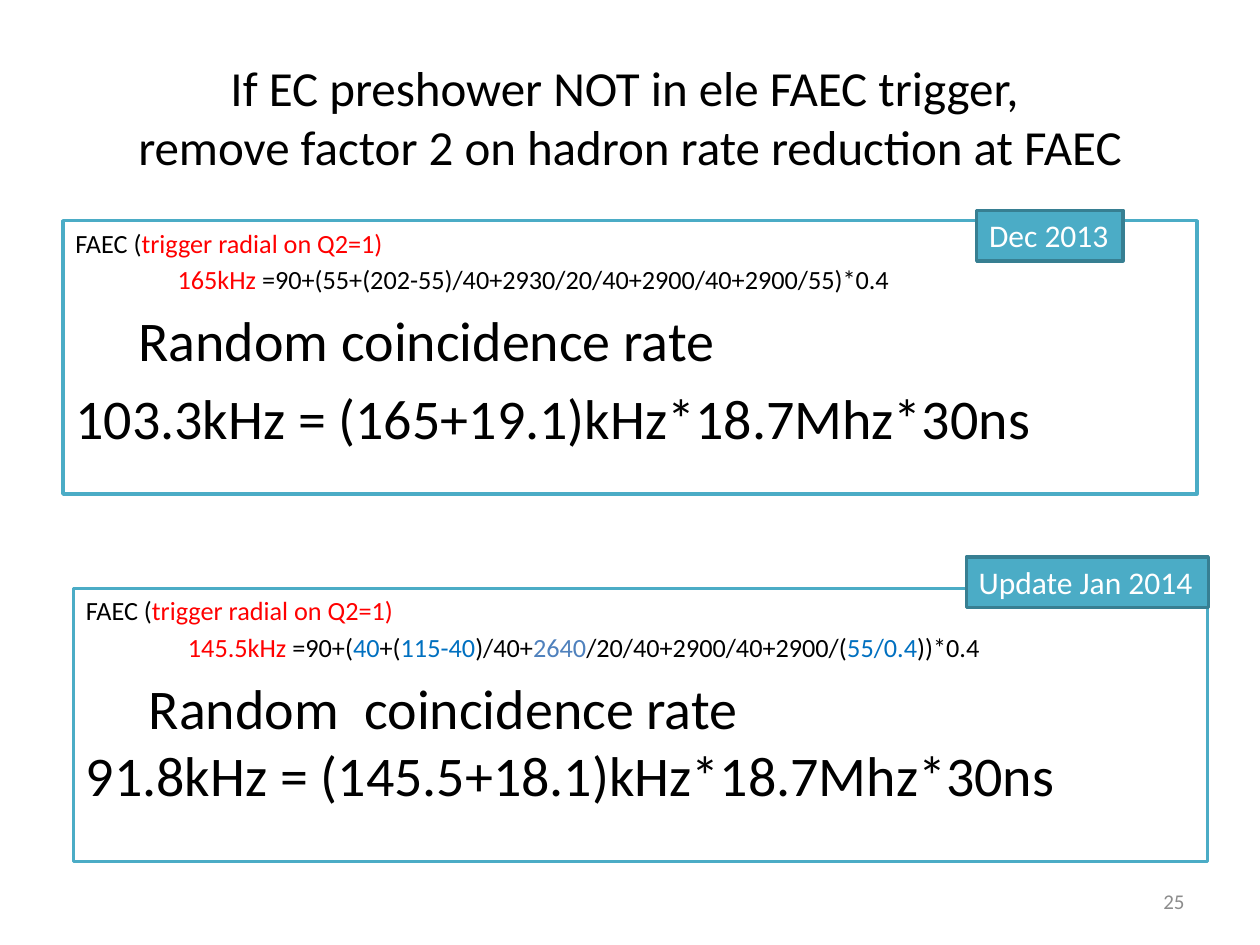
import dataclasses
import pptx
import pptx.util
import pptx.dml.color
import pptx.enum.shapes
import pptx.enum.text

Cm, Pt = pptx.util.Cm, pptx.util.Pt
ALIGN = pptx.enum.text.PP_ALIGN
ANCHOR = pptx.enum.text.MSO_ANCHOR
FONT = "Calibri"
BLACK, WHITE, RED = "000000", "FFFFFF", "FF0000"
TEAL, DARK, BLUE, PALE, GRAY = "4BACC6", "377F92", "0070C0", "4F81BD", "8C8C8C"


@dataclasses.dataclass
class Line:
    runs: list  # (text, colour) pairs
    size: int
    indent: float = 0  # cm
    before: int = 0  # points


@dataclasses.dataclass
class Panel:
    left: float
    top: float
    lines: list
    tag: str
    tag_box: tuple  # left, top, width


def rgb(code: str):
    return pptx.dml.color.RGBColor.from_string(code)


def style(para, size: int, color: str):
    for run in para.runs:
        font = run.font
        font.name, font.size, font.bold = FONT, Pt(size), False
        font.color.rgb = rgb(color)


def add_box(slide, left, top, width, height, fill: str, edge: str):
    box = slide.shapes.add_shape(
        pptx.enum.shapes.MSO_SHAPE.RECTANGLE,
        Cm(left), Cm(top), Cm(width), Cm(height))
    box.shadow.inherit = False
    box.fill.solid()
    box.fill.fore_color.rgb = rgb(fill)
    box.line.color.rgb = rgb(edge)
    box.line.width = Pt(2)
    box.text_frame.vertical_anchor = ANCHOR.TOP
    return box


def add_lines(frame, lines: list):
    for i, line in enumerate(lines):
        para = frame.add_paragraph() if i else frame.paragraphs[0]
        para.alignment = ALIGN.LEFT
        para.space_before = Pt(line.before)
        para._p.get_or_add_pPr().set("marL", str(Cm(line.indent)))
        for text, color in line.runs:
            run = para.add_run()
            run.text = text
            run.font.name, run.font.size = FONT, Pt(line.size)
            run.font.color.rgb = rgb(color)


def add_panel(slide, panel: Panel):
    box = add_box(slide, panel.left, panel.top, 22.86, 5.51, WHITE, TEAL)
    box.text_frame.word_wrap = True
    add_lines(box.text_frame, panel.lines)

    # Date tag over the top edge
    left, top, width = panel.tag_box
    tag = add_box(slide, left, top, width, 1.02, TEAL, DARK)
    tag.text_frame.word_wrap = False
    add_lines(tag.text_frame, [Line([(panel.tag, WHITE)], 18)])


HEAD = Line([("FAEC (", BLACK), ("trigger radial on Q2=1)", RED)], 15, before=3)

PANELS = [
    Panel(1.27, 4.45, [
        HEAD,
        Line([("165kHz ", RED),
              ("=90+(55+(202-55)/40+2930/20/40+2900/40+2900/55)*0.4", BLACK)],
             15, 2.06, 3),
        Line([("Random coincidence rate", BLACK)], 32, 1.27, 6),
        Line([("103.3kHz = (165+19.1)kHz*18.7Mhz*30ns", BLACK)], 32, 0, 6),
    ], "Dec 2013", (19.69, 4.24, 2.95)),
    Panel(1.48, 11.86, [
        HEAD,
        Line([("145.5kHz ", RED), ("=90+(", BLACK), ("40", BLUE),
              ("+(", BLACK), ("115-40", BLUE), (")/40+", BLACK),
              ("2640", PALE), ("/20/40+2900/40+2900/(", BLACK),
              ("55/0.4", BLUE), ("))*0.4", BLACK)], 15, 2.06, 3),
        Line([("Random  coincidence rate", BLACK)], 32, 1.27, 6),
        Line([("91.8kHz = (145.5+18.1)kHz*18.7Mhz*30ns", BLACK)], 32),
    ], "Update Jan 2014", (19.48, 11.23, 4.88)),
]


def main():
    deck = pptx.Presentation()
    deck.slide_width, deck.slide_height = Cm(25.4), Cm(19.05)
    slide = deck.slides.add_slide(deck.slide_layouts[5])

    # Title
    title = slide.shapes.title
    title.left, title.top = Cm(1.27), Cm(0.76)
    title.width, title.height = Cm(22.86), Cm(3.18)
    frame = title.text_frame
    frame.text = ("If EC preshower NOT in ele FAEC trigger, \v"
                  "remove factor 2 on hadron rate reduction at FAEC")
    frame.vertical_anchor = ANCHOR.MIDDLE
    frame.paragraphs[0].alignment = ALIGN.CENTER
    style(frame.paragraphs[0], 28, BLACK)

    # Rate panels
    for panel in PANELS:
        add_panel(slide, panel)

    # Page number
    page = slide.shapes.add_textbox(Cm(18.2), Cm(17.66), Cm(5.93), Cm(1.01))
    frame = page.text_frame
    frame.word_wrap = True
    frame.vertical_anchor = ANCHOR.MIDDLE
    frame.text = "25"
    frame.paragraphs[0].alignment = ALIGN.RIGHT
    style(frame.paragraphs[0], 12, GRAY)

    deck.save("out.pptx")


if __name__ == "__main__":
    main()
